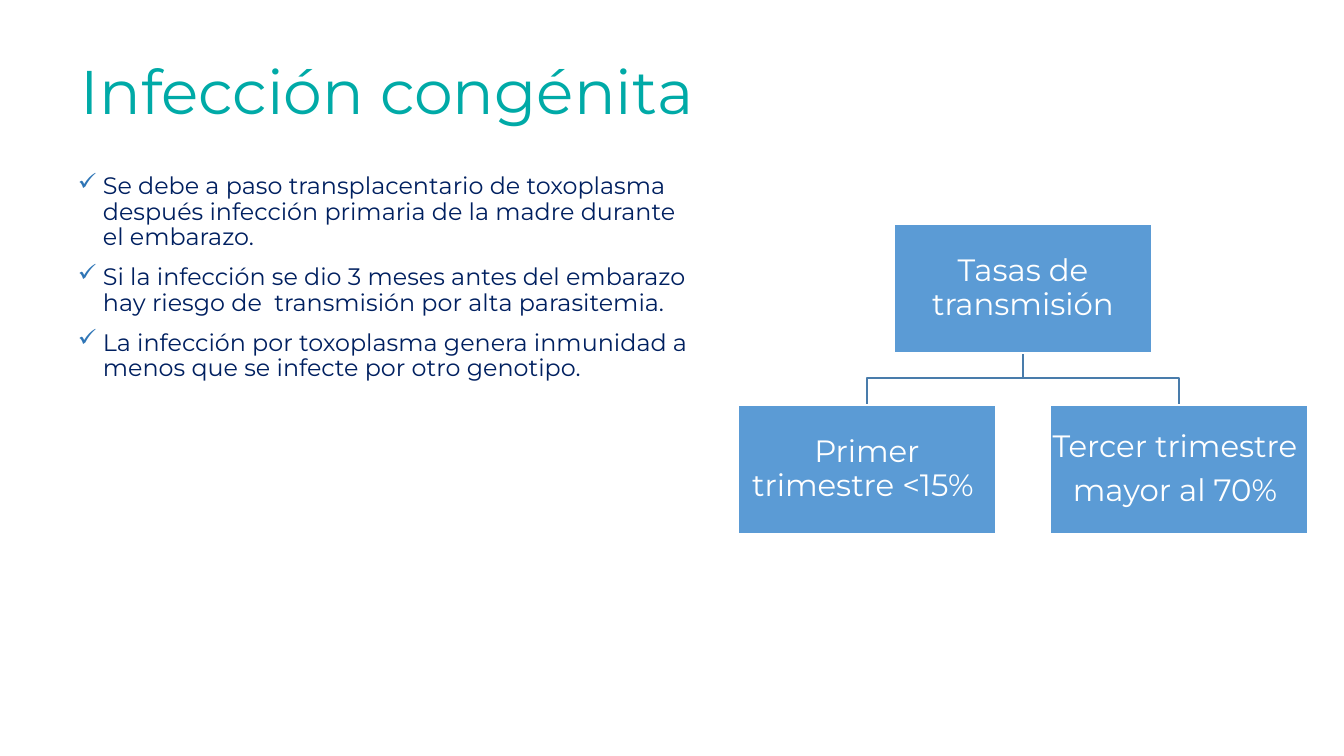
from dataclasses import dataclass

from lxml import etree
from pptx import Presentation
from pptx import util as u
from pptx.dml.color import RGBColor
from pptx.enum import shapes, text
from pptx.oxml.ns import qn

EMU_PER_PX = u.Inches(1) / 100.8


@dataclass(frozen=True)
class Theme:
    font: str = "Montserrat"
    title: str = "00AAA7"
    body: str = "002060"
    bullet: str = "2E75B6"
    node: str = "5B9BD5"
    link: str = "497CAB"
    white: str = "FFFFFF"
    title_size: int = 44
    body_size: int = 17
    node_size: int = 22


@dataclass(frozen=True)
class Area:
    left: int
    top: int
    width: int
    height: int

    @property
    def center(self) -> int:
        return self.left + self.width // 2

    @property
    def bottom(self) -> int:
        return self.top + self.height

    def emu(self) -> list[int]:
        return [px(side) for side in (self.left, self.top, self.width, self.height)]


@dataclass(frozen=True)
class Node:
    area: Area
    lines: tuple[str, ...]


def px(length: int) -> int:
    return round(length * EMU_PER_PX)


THEME = Theme()
NODE_WIDTH, NODE_HEIGHT, NODE_GAP = 258, 129, 54
TREE_LEFT, ROOT_TOP, CHILD_TOP = 738, 224, 405
STEP = NODE_WIDTH + NODE_GAP
ROOT = Node(Area(TREE_LEFT + STEP // 2, ROOT_TOP, NODE_WIDTH, NODE_HEIGHT), ("Tasas de transmisión",))
CHILD_LINES = (("Primer trimestre <15% ",), ("Tercer trimestre ", "mayor al 70% "))
CHILDREN = [
    Node(Area(TREE_LEFT + index * STEP, CHILD_TOP, NODE_WIDTH, NODE_HEIGHT), lines)
    for index, lines in enumerate(CHILD_LINES)
]
TITLE_AREA = Area(-25, 50, 825, 89)
BODY_AREA = Area(68, 169, 640, 417)
BULLETS = (
    "Se debe a paso transplacentario de toxoplasma después infección primaria de la madre durante el embarazo.",
    "Si la infección se dio 3 meses antes del embarazo hay riesgo de  transmisión por alta parasitemia.",
    "La infección por toxoplasma genera inmunidad a menos que se infecte por otro genotipo.",
)
CENTERED = {"alignment": text.PP_ALIGN.CENTER}
MIDDLE = {"vertical_anchor": text.MSO_ANCHOR.MIDDLE}
NODE_FRAME = MIDDLE | {f"margin_{side}": px(2) for side in ("left", "top", "right", "bottom")}


def apply(target, values: dict) -> None:
    for name, value in values.items():
        setattr(target, name, value)


def add_bullet(para) -> None:
    properties = para._p.get_or_add_pPr()
    properties.set("marL", str(px(25)))
    properties.set("indent", str(-px(25)))
    color = etree.SubElement(properties, qn("a:buClr"))
    etree.SubElement(color, qn("a:srgbClr"), val=THEME.bullet)
    etree.SubElement(properties, qn("a:buChar"), char="✓")


def write(box, lines: tuple[str, ...], size: int, color: str, frame: dict,
          layout: dict, gap: dict, bulleted: bool = False) -> None:
    apply(box.text_frame, {"word_wrap": True} | frame)
    for index, line in enumerate(lines):
        para = box.text_frame.add_paragraph() if index else box.text_frame.paragraphs[0]
        if bulleted:
            add_bullet(para)
        apply(para, {"line_spacing": 0.9} | layout | (gap if index else {}))
        span = para.add_run()
        span.text = line
        apply(span.font, {"name": THEME.font, "size": u.Pt(size)})
        span.font.color.rgb = RGBColor.from_string(color)


def set_line(shape, color: str) -> None:
    shape.shadow.inherit = False
    shape.line.color.rgb = RGBColor.from_string(color)
    shape.line.width = u.Pt(1)


def add_link(page, parent: Area, child: Area) -> None:
    bend = parent.bottom + 25
    outline = page.shapes.build_freeform(px(parent.center), px(parent.bottom))
    corners = ((parent.center, bend), (child.center, bend), (child.center, child.top))
    outline.add_line_segments([(px(x), px(y)) for x, y in corners], close=False)
    link = outline.convert_to_shape()
    link.fill.background()
    set_line(link, THEME.link)


def add_node(page, node: Node) -> None:
    box = page.shapes.add_shape(shapes.MSO_SHAPE.RECTANGLE, *node.area.emu())
    box.fill.solid()
    box.fill.fore_color.rgb = RGBColor.from_string(THEME.node)
    set_line(box, THEME.white)
    write(box, node.lines, THEME.node_size, THEME.white, NODE_FRAME, CENTERED, {"space_before": u.Pt(8)})


def main() -> None:
    deck = Presentation()
    apply(deck, {"slide_width": px(1344), "slide_height": px(756)})
    page = deck.slides.add_slide(deck.slide_layouts[6])
    title = page.shapes.add_textbox(*TITLE_AREA.emu())
    write(title, ("Infección congénita",), THEME.title_size, THEME.title, MIDDLE, CENTERED, {})
    body = page.shapes.add_textbox(*BODY_AREA.emu())
    write(body, BULLETS, THEME.body_size, THEME.body, {}, {"alignment": text.PP_ALIGN.LEFT},
          {"space_before": u.Pt(10)}, bulleted=True)
    for child in CHILDREN:
        add_link(page, ROOT.area, child.area)
    for node in (ROOT, *CHILDREN):
        add_node(page, node)
    deck.save("out.pptx")


if __name__ == "__main__":
    main()
